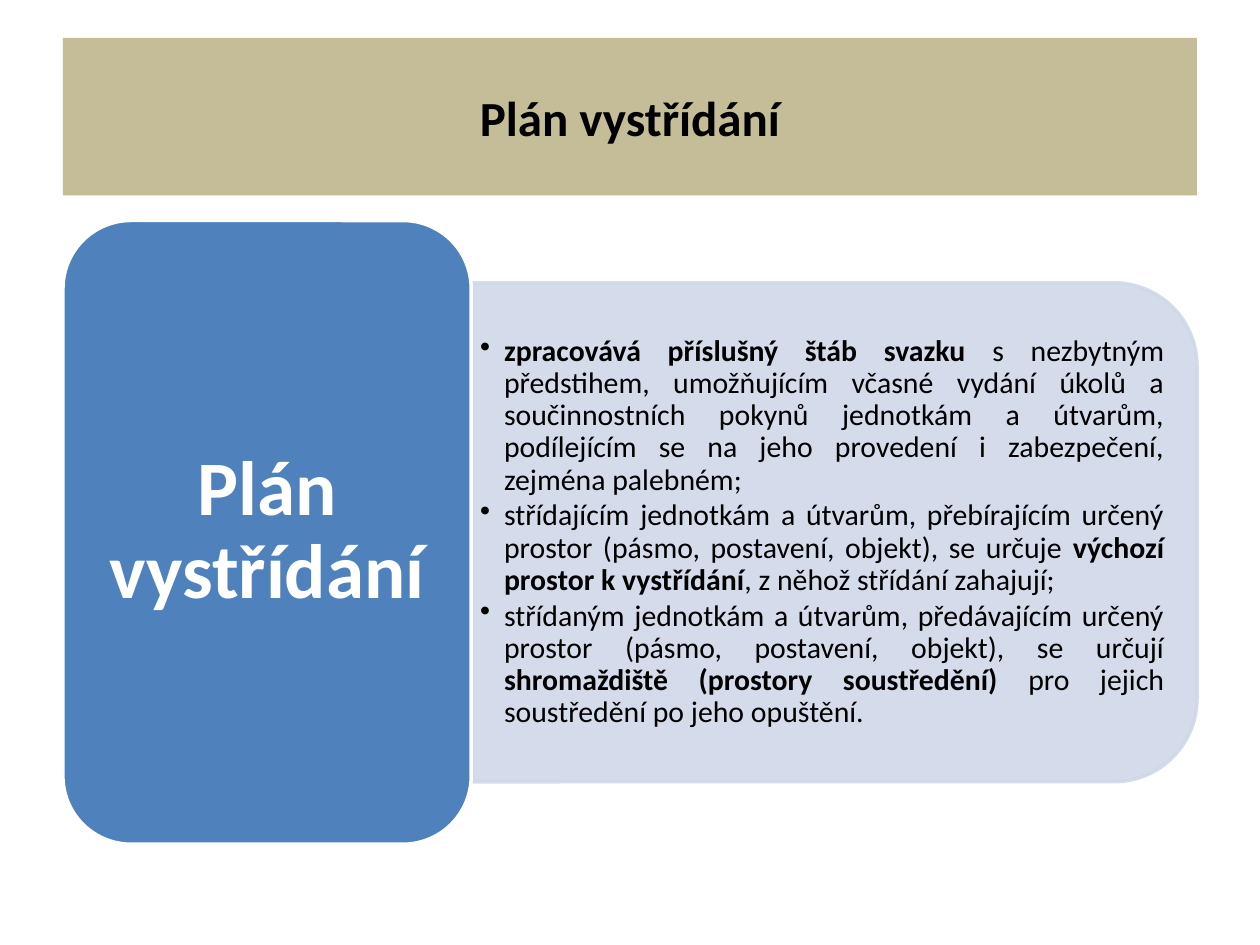
from lxml import etree
from pptx import Presentation
from pptx.dml.color import RGBColor
from pptx.enum.shapes import MSO_SHAPE
from pptx.enum.text import MSO_ANCHOR, PP_ALIGN
from pptx.oxml.ns import qn
from pptx.util import Inches, Pt

RECTANGLE = MSO_SHAPE.RECTANGLE
ROUNDED = MSO_SHAPE.ROUNDED_RECTANGLE
ROUND_TOP = MSO_SHAPE.ROUND_2_SAME_RECTANGLE
MIDDLE = MSO_ANCHOR.MIDDLE
CENTER, JUSTIFY = PP_ALIGN.CENTER, PP_ALIGN.JUSTIFY

WIDTH, HEIGHT = 10, 7.5
MARGIN = 0.05 * WIDTH
CONTENT_WIDTH = WIDTH - 2 * MARGIN
LABEL_SHARE = 0.36
PANEL_SHARE = 0.8
INDENT = 0.19

TITLE = "Plán vystřídání"
# Each point is a list of (text, bold) runs.
POINTS = [
    [("zpracovává příslušný štáb svazku ", True),
     ("s nezbytným předstihem, umožňujícím včasné vydání úkolů a "
      "součinnostních pokynů jednotkám a útvarům, podílejícím se na jeho "
      "provedení i zabezpečení, zejména palebném;", False)],
    [("střídajícím jednotkám a útvarům, přebírajícím určený prostor "
      "(pásmo, postavení, objekt), se určuje ", False),
     ("výchozí prostor k vystřídání", True),
     (", z něhož střídání zahajují;", False)],
    [("střídaným jednotkám a útvarům, předávajícím určený prostor "
      "(pásmo, postavení, objekt), se určují ", False),
     ("shromaždiště (prostory soustředění)", True),
     (" pro jejich soustředění po jeho opuštění.", False)],
]


def color(value):
    return RGBColor.from_string(value)


def add_box(slide, kind, box, fill, line=None):
    shape = slide.shapes.add_shape(kind, *map(Inches, box))
    shape.shadow.inherit = False
    shape.fill.solid()
    shape.fill.fore_color.rgb = color(fill)
    if line:
        shape.line.color.rgb = color(line)
        shape.line.width = Pt(2)
    else:
        shape.line.fill.background()
    return shape


def set_opacity(shape, percent):
    """Apply the same opacity to fill and line."""
    for element in shape._element.spPr.iter(qn("a:srgbClr")):
        etree.SubElement(element, qn("a:alpha"), val=str(percent * 1000))


def prepare_frame(shape, horizontal, vertical):
    frame = shape.text_frame
    frame.word_wrap = True
    frame.vertical_anchor = MIDDLE
    frame.margin_left = frame.margin_right = Inches(horizontal)
    frame.margin_top = frame.margin_bottom = Inches(vertical)
    return frame


def write_runs(paragraph, runs, size, text_color, alignment):
    paragraph.alignment = alignment
    for text, bold in runs:
        run = paragraph.add_run()
        run.text = text
        run.font.name = "Calibri"
        run.font.size = Pt(size)
        run.font.bold = bold
        run.font.color.rgb = color(text_color)


def add_bullet(paragraph):
    properties = paragraph._p.get_or_add_pPr()
    properties.set("marL", str(Inches(INDENT)))
    properties.set("indent", str(-Inches(INDENT)))
    etree.SubElement(properties, qn("a:buChar"), char="•")


def add_title(slide, box):
    shape = add_box(slide, RECTANGLE, box, "C4BD97")
    frame = prepare_frame(shape, 0.1, 0.05)
    write_runs(frame.paragraphs[0], [(TITLE, True)], 28, "000000", CENTER)


def add_panel(slide, box):
    """Panel rounded on its right side, with the bulleted points."""
    left, top, width, height = box
    # The shape is drawn upright around the same centre, then turned.
    shift = (width - height) / 2
    panel = add_box(slide, ROUND_TOP,
                    (left + shift, top - shift, height, width),
                    "D0D8E8", "D0D8E8")
    panel.rotation = 90
    set_opacity(panel, 90)

    inset = 0.19
    text_box = slide.shapes.add_textbox(
        *map(Inches, (left, top + inset, width - inset, height - 2 * inset)))
    frame = prepare_frame(text_box, 0.07, 0.04)
    for index, runs in enumerate(POINTS):
        paragraph = frame.add_paragraph() if index else frame.paragraphs[0]
        write_runs(paragraph, runs, 17, "000000", JUSTIFY)
        paragraph.line_spacing = 0.9
        paragraph.space_after = Pt(2.1)
        add_bullet(paragraph)


def add_label(slide, box):
    shape = add_box(slide, ROUNDED, box, "4F81BD", "FFFFFF")
    frame = prepare_frame(shape, 0.18, 0.09)
    paragraph = frame.paragraphs[0]
    write_runs(paragraph, [(TITLE, True)], 44, "FFFFFF", CENTER)
    paragraph.line_spacing = 0.9


def add_labelled_panel(slide, box):
    left, top, width, height = box
    label_width = width * LABEL_SHARE
    panel_height = height * PANEL_SHARE
    add_panel(slide, (left + label_width, top + (height - panel_height) / 2,
                      width - label_width, panel_height))
    add_label(slide, (left, top, label_width, height))


def main():
    presentation = Presentation()
    presentation.slide_width = Inches(WIDTH)
    presentation.slide_height = Inches(HEIGHT)
    slide = presentation.slides.add_slide(presentation.slide_layouts[6])
    add_title(slide, (MARGIN, 0.04 * HEIGHT, CONTENT_WIDTH, HEIGHT / 6))
    add_labelled_panel(slide, (MARGIN, 1.75, CONTENT_WIDTH, 0.66 * HEIGHT))
    presentation.save("out.pptx")


if __name__ == "__main__":
    main()
